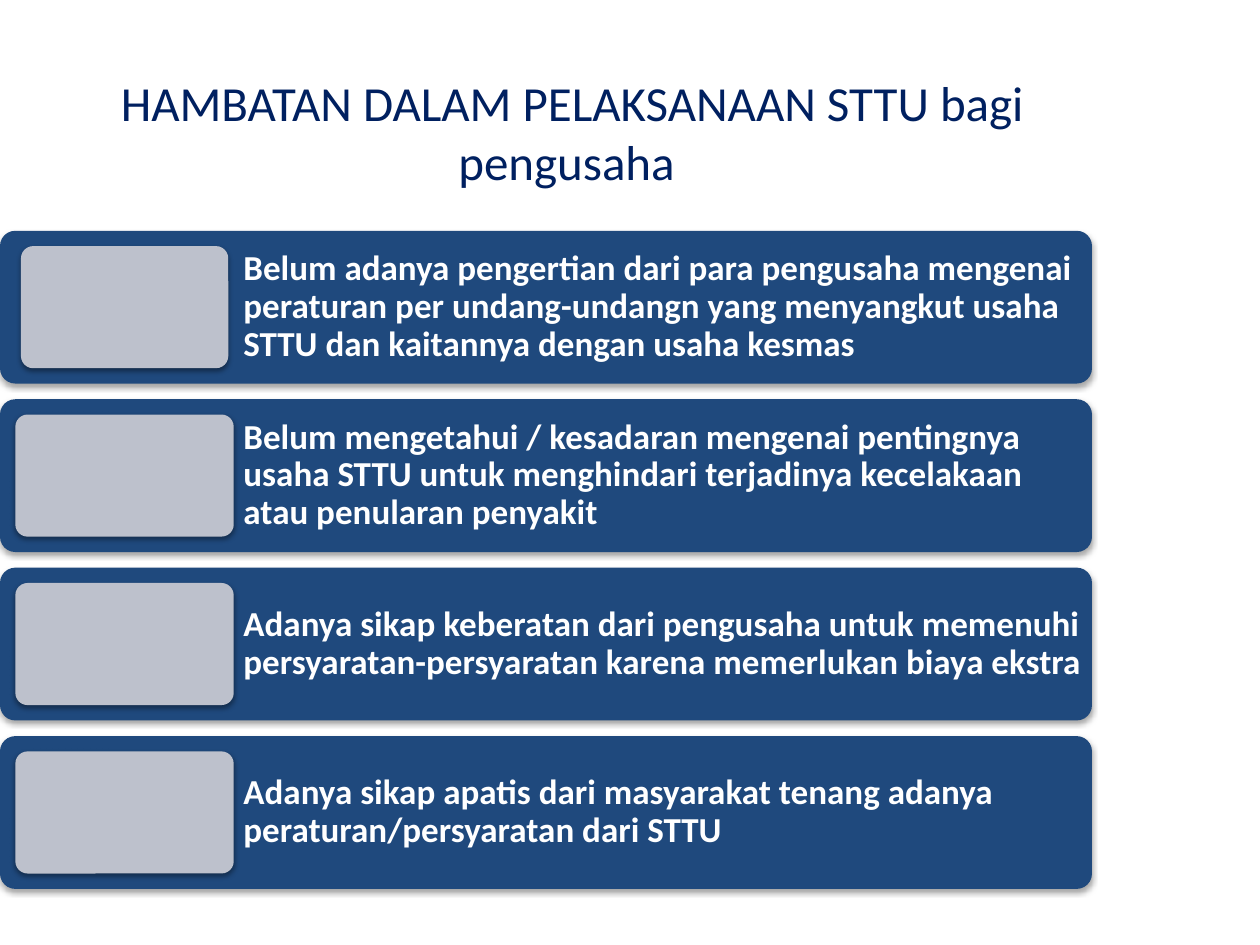
"""Build a slide listing the obstacles to STTU for business owners."""
import pptx
import pptx.dml.color
import pptx.enum.shapes
import pptx.enum.text
import pptx.oxml
import pptx.oxml.ns
import pptx.util

Pt = pptx.util.Pt
COLORS = {"title": "002060", "band": "1F497D", "tile": "BDC1CC", "text": "FFFFFF", "shadow": "000000"}
FONT = "Calibri"
TITLE = "HAMBATAN DALAM PELAKSANAAN STTU bagi pengusaha "
OBSTACLES = [
    "Belum adanya pengertian dari para pengusaha mengenai peraturan per undang-undangn "
    "yang menyangkut usaha STTU dan kaitannya dengan usaha kesmas",
    "Belum mengetahui / kesadaran mengenai pentingnya usaha STTU untuk menghindari "
    "terjadinya kecelakaan atau penularan penyakit",
    "Adanya sikap keberatan dari pengusaha untuk memenuhi persyaratan-persyaratan "
    "karena memerlukan biaya ekstra",
    "Adanya sikap apatis dari masyarakat tenang adanya peraturan/persyaratan dari STTU",
]
BAND_TOP, BAND_PITCH = 131.9, 96.25
BAND_WIDTH, BAND_HEIGHT = 624, 87.3
TEXT_LEFT, TEXT_WIDTH, TEXT_INSET = 133.4, 490.5, 5.76
TILE_INSET, TILE_HEIGHT = 8.75, 69.8
FIRST_TILE = (12, 118.5)
OTHER_TILE = (8.75, 124.8)


def rgb(name):
    return pptx.dml.color.RGBColor.from_string(COLORS[name])


def add_shadow(shape, alpha, distance):
    shape.shadow.inherit = False
    effects = shape._element.spPr.find(pptx.oxml.ns.qn("a:effectLst"))
    effects.append(pptx.oxml.parse_xml(
        f'<a:outerShdw {pptx.oxml.ns.nsdecls("a")} blurRad="{Pt(3.1)}" dist="{Pt(distance)}" '
        f'dir="5400000" rotWithShape="0"><a:srgbClr val="{COLORS["shadow"]}">'
        f'<a:alpha val="{alpha * 1000}"/></a:srgbClr></a:outerShdw>'))


def add_rounded(slide, left, top, width, height, color, alpha, distance):
    shape = slide.shapes.add_shape(
        pptx.enum.shapes.MSO_SHAPE.ROUNDED_RECTANGLE, Pt(left), Pt(top), Pt(width), Pt(height))
    shape.adjustments[0] = 0.1
    shape.fill.solid()
    shape.fill.fore_color.rgb = rgb(color)
    shape.line.fill.background()
    add_shadow(shape, alpha, distance)


def add_text(slide, left, top, width, height, text, size, color, bold=False):
    text_frame = slide.shapes.add_textbox(Pt(left), Pt(top), Pt(width), Pt(height)).text_frame
    text_frame.word_wrap = True
    text_frame.vertical_anchor = pptx.enum.text.MSO_ANCHOR.MIDDLE
    text_frame.text = text
    font = text_frame.paragraphs[0].runs[0].font
    font.name, font.size, font.bold = FONT, Pt(size), bold
    font.color.rgb = rgb(color)
    return text_frame


def add_title(slide):
    text_frame = add_text(slide, 41.76, 30.24, 570.24, 90, TITLE, 28, "title")
    text_frame.paragraphs[0].alignment = pptx.enum.text.PP_ALIGN.CENTER


def add_obstacle(slide, top, text, tile):
    add_rounded(slide, 0, top, BAND_WIDTH, BAND_HEIGHT, "band", 35, 1.8)
    text_frame = add_text(slide, TEXT_LEFT, top, TEXT_WIDTH, BAND_HEIGHT, text, 20, "text", True)
    text_frame.margin_left = text_frame.margin_right = Pt(TEXT_INSET)
    text_frame.margin_top = text_frame.margin_bottom = Pt(TEXT_INSET)
    text_frame.paragraphs[0].line_spacing = 0.9
    tile_left, tile_width = tile
    add_rounded(slide, tile_left, top + TILE_INSET, tile_width, TILE_HEIGHT, "tile", 38, 1.6)


def main():
    presentation = pptx.Presentation()
    presentation.slide_width, presentation.slide_height = Pt(720), Pt(540)
    slide = presentation.slides.add_slide(presentation.slide_layouts[6])
    add_title(slide)
    for index, text in enumerate(OBSTACLES):
        tile = OTHER_TILE if index else FIRST_TILE
        add_obstacle(slide, BAND_TOP + index * BAND_PITCH, text, tile)
    presentation.save("out.pptx")


if __name__ == "__main__":
    main()
